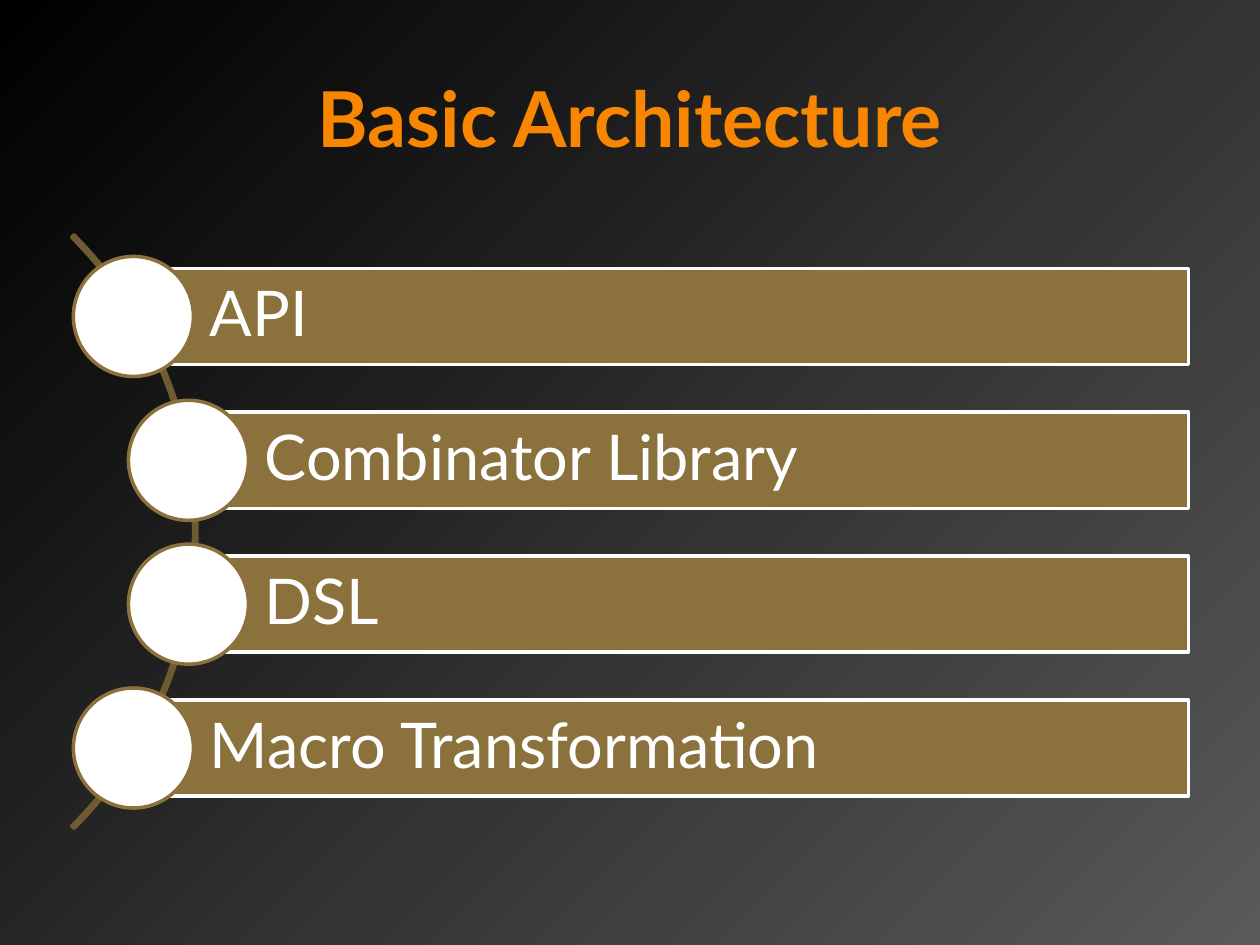
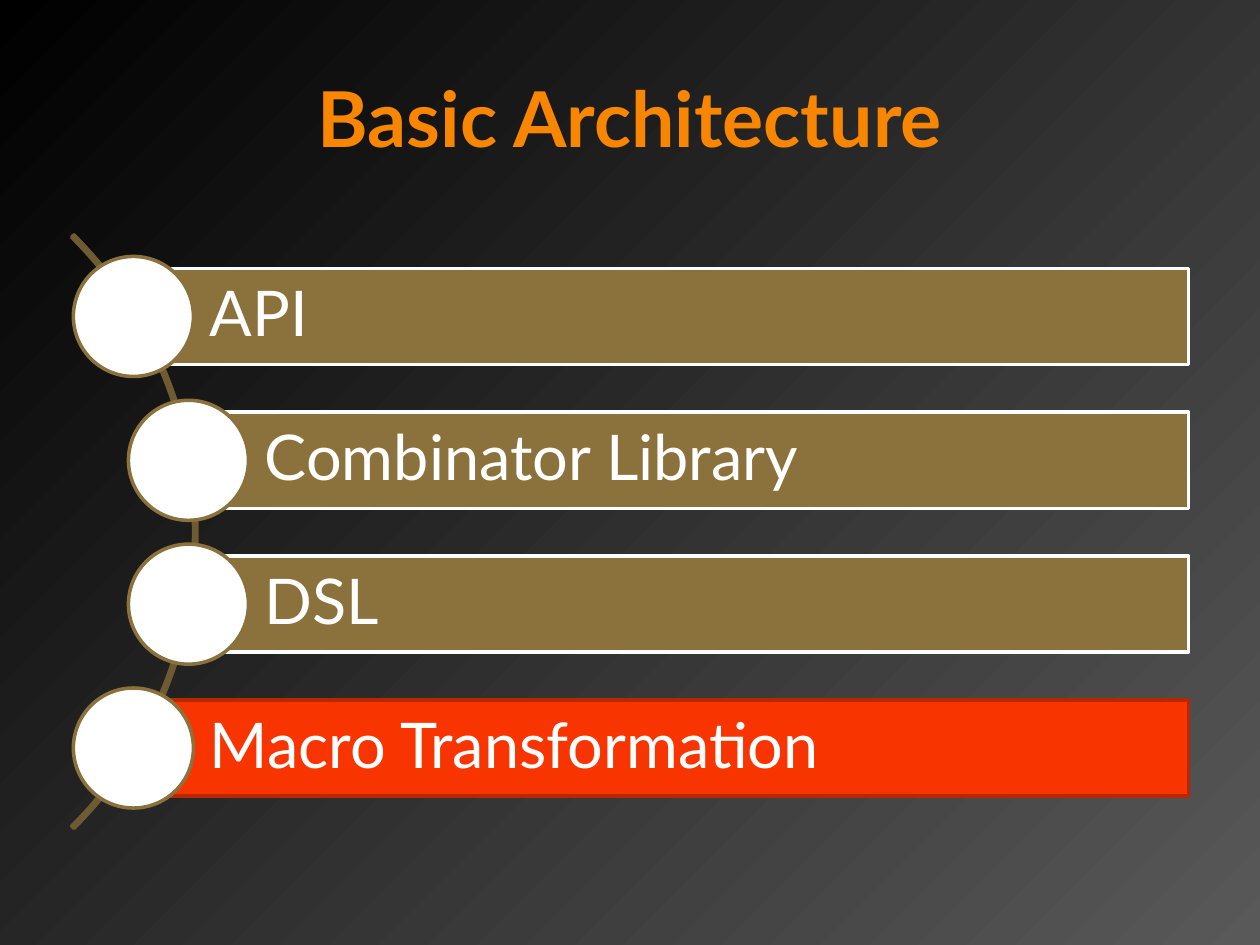
from dataclasses import dataclass

from lxml import etree
from pptx import Presentation
from pptx import util as u
from pptx.dml.color import RGBColor
from pptx.enum import shapes, text
from pptx.oxml import ns


@dataclass(frozen=True)
class Theme:
    font: str = "Lato"
    title_size: int = 44
    label_size: int = 36
    line_width: int = 2
    glow: str = "595959"
    dark: str = "000000"
    title: str = "F88600"
    light: str = "FFFFFF"
    bronze: str = "8B723D"
    arc: str = "6F5B31"
    accent: str = "F83500"
    accent_edge: str = "B72700"


TITLE = "Basic Architecture"
LAYERS = ["API", "Combinator Library", "DSL", "Macro Transformation"]
DISC_CENTRES = [2.69, 3.8, 3.8, 2.69]
FIRST_CENTRE = 6.38
PITCH = 2.9
BAR_HEIGHT = 1.94
BAR_RIGHT = 23.96
DISC = 2.42
ARC_BOX = (-12.95, 2.26, 16.92, 16.92)
ARC_ADJUSTMENTS = (189, 27, 0.004)


def write(frame, words, *, font, size, color, bold=False, align=text.PP_ALIGN.LEFT, spacing=None):
    frame.word_wrap = True
    frame.vertical_anchor = text.MSO_ANCHOR.MIDDLE
    para = frame.paragraphs[0]
    para.alignment = align
    para.line_spacing = spacing
    span = para.add_run()
    span.text = words
    span.font.name = font
    span.font.size = u.Pt(size)
    span.font.bold = bold
    span.font.color.rgb = RGBColor.from_string(color)


class Builder:
    def __init__(self, theme):
        self.theme = theme
        self.deck = Presentation()
        self.deck.slide_width = u.Cm(25.4)
        self.deck.slide_height = u.Cm(19.05)
        self.page = None
        self.paint_background()

    def paint_background(self):
        master = self.deck.slide_master
        fill = master.background.fill
        fill.gradient()
        for stop, color in zip(fill.gradient_stops, (self.theme.glow, self.theme.dark)):
            stop.color.rgb = RGBColor.from_string(color)
        gradient = master.element.find(".//" + ns.qn("a:gradFill"))
        gradient.remove(gradient.find(ns.qn("a:lin")))
        radial = etree.SubElement(gradient, ns.qn("a:path"), path="circle")
        etree.SubElement(radial, ns.qn("a:fillToRect"), l="100000", t="100000")

    def add_page(self, title):
        self.page = self.deck.slides.add_slide(self.deck.slide_layouts[5])
        box = self.page.shapes.title
        box.left, box.top, box.width, box.height = map(u.Cm, (1.27, 0.76, 22.86, 3.18))
        write(box.text_frame, title, font=self.theme.font, size=self.theme.title_size,
              color=self.theme.title, bold=True, align=text.PP_ALIGN.CENTER)

    def add_shape(self, kind, bounds, line, fill=None):
        shape = self.page.shapes.add_shape(kind, *map(u.Cm, bounds))
        shape.shadow.inherit = False
        if fill:
            shape.fill.solid()
            shape.fill.fore_color.rgb = RGBColor.from_string(fill)
        else:
            shape.fill.background()
        shape.line.color.rgb = RGBColor.from_string(line)
        shape.line.width = u.Pt(self.theme.line_width)
        return shape

    def add_arc(self):
        arc = self.add_shape(shapes.MSO_SHAPE.BLOCK_ARC, ARC_BOX, self.theme.arc)
        for index, value in enumerate(ARC_ADJUSTMENTS):
            arc.adjustments[index] = value

    def add_bar(self, label, left, centre, highlighted):
        theme = self.theme
        fill, line = (theme.accent, theme.accent_edge) if highlighted else (theme.bronze, theme.light)
        bounds = (left, centre - BAR_HEIGHT / 2, BAR_RIGHT - left, BAR_HEIGHT)
        bar = self.add_shape(shapes.MSO_SHAPE.RECTANGLE, bounds, line, fill)
        frame = bar.text_frame
        frame.margin_left = u.Cm(1.54)
        frame.margin_top = frame.margin_right = frame.margin_bottom = u.Cm(0.25)
        write(frame, label, font=theme.font, size=theme.label_size,
              color=theme.light, spacing=0.9)

    def add_disc(self, x, y):
        bounds = (x - DISC / 2, y - DISC / 2, DISC, DISC)
        self.add_shape(shapes.MSO_SHAPE.OVAL, bounds, self.theme.bronze, self.theme.light)

    def add_architecture(self, highlight=None):
        self.add_page(TITLE)
        self.add_arc()
        for row, (label, x) in enumerate(zip(LAYERS, DISC_CENTRES)):
            y = FIRST_CENTRE + row * PITCH
            self.add_bar(label, x, y, label == highlight)
            self.add_disc(x, y)


def main():
    builder = Builder(Theme())
    builder.add_architecture()
    builder.add_architecture(highlight="Macro Transformation")
    builder.deck.save("out.pptx")


if __name__ == "__main__":
    main()
